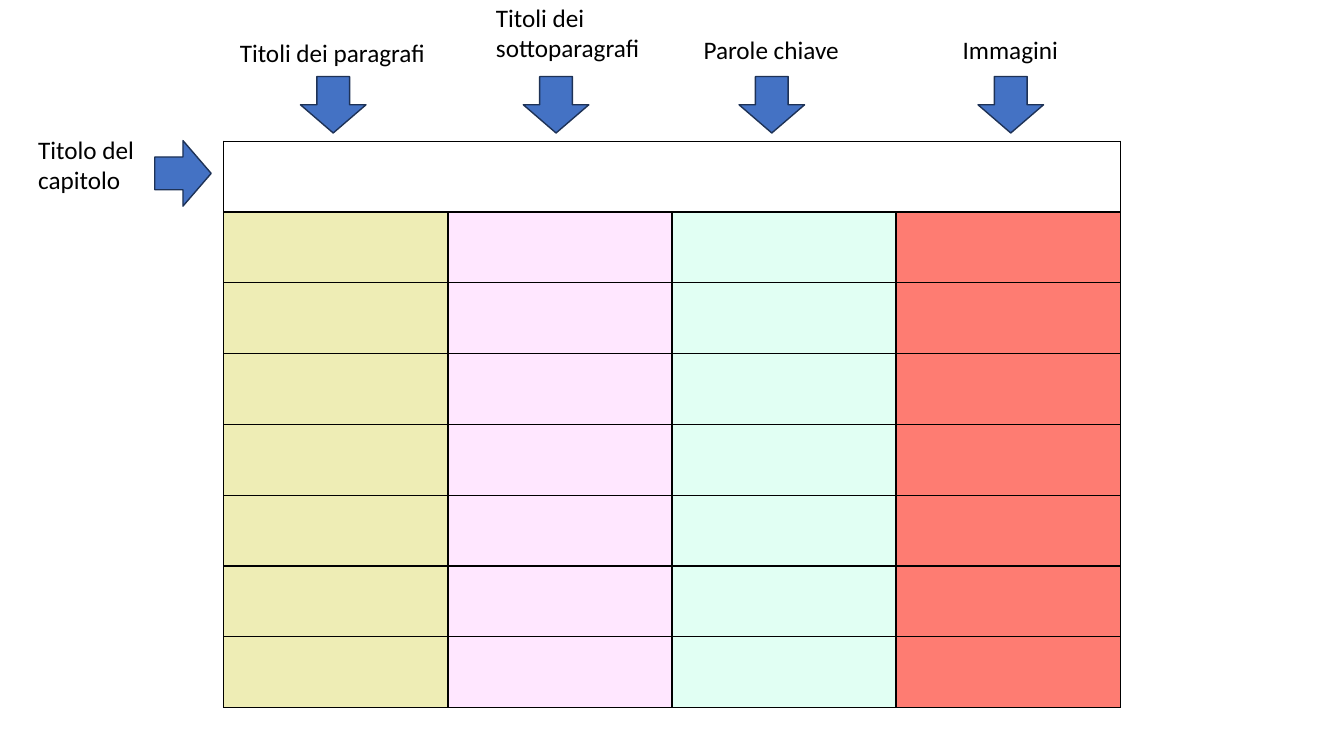
from dataclasses import dataclass

from lxml.etree import SubElement
from pptx import Presentation
from pptx.dml.color import RGBColor as Color
from pptx.enum.shapes import MSO_SHAPE as Preset
from pptx.enum.text import MSO_AUTO_SIZE as AutoSize
from pptx.oxml.ns import qn
from pptx.util import Pt

EMU_PER_PX = 9144


@dataclass(frozen=True)
class Theme:
    font: str = "Calibri"
    text_size: int = 18
    line_width: int = 1
    ink: str = "000000"
    header: str = "FFFFFF"
    columns: tuple = ("EEEDB5", "FFE7FF", "E1FFF3", "FE7C72")
    arrow: str = "4472C4"
    arrow_edge: str = "1E3256"


THEME = Theme()
TOPIC_ROWS = 7
COLUMN_ARROWS = (298, 519, 733, 970)
LABELS = (
    ("Titoli dei paragrafi", (228, 32, 206, 40), False),
    ("Titoli dei sottoparagrafi", (482, -3, 165, 71), True),
    ("Parole chiave", (688, 29, 156, 40), False),
    ("Immagini", (945, 29, 116, 40), False),
    ("Titolo del capitolo", (28, 128, 120, 71), True),
)


def px(*lengths):
    return [length * EMU_PER_PX for length in lengths]


def add_label(page, text, frame, wrap):
    box = page.shapes.add_textbox(*px(*frame))
    box.text_frame.word_wrap = wrap
    box.text_frame.auto_size = AutoSize.SHAPE_TO_FIT_TEXT
    span = box.text_frame.paragraphs[0].add_run()
    span.text = text
    span.font.name = THEME.font
    span.font.size = Pt(THEME.text_size)
    span.font.color.rgb = Color.from_string(THEME.ink)


def add_arrow(page, left, top, rotation=0):
    arrow = page.shapes.add_shape(Preset.DOWN_ARROW, *px(left, top, 65, 56))
    arrow.rotation = rotation
    arrow.shadow.inherit = False
    arrow.fill.solid()
    arrow.fill.fore_color.rgb = Color.from_string(THEME.arrow)
    arrow.line.color.rgb = Color.from_string(THEME.arrow_edge)
    arrow.line.width = Pt(THEME.line_width)


def format_cell(cell, fill, sides):
    properties = cell._tc.get_or_add_tcPr()
    for side in "LRTB":
        line = SubElement(properties, qn(f"a:ln{side}"), w=str(Pt(THEME.line_width)))
        if side in sides:
            paint = SubElement(line, qn("a:solidFill"))
            SubElement(paint, qn("a:srgbClr"), val=THEME.ink)
        else:
            SubElement(line, qn("a:noFill"))
    cell.fill.solid()
    cell.fill.fore_color.rgb = Color.from_string(fill)


def add_chapter_table(page):
    count = len(THEME.columns)
    frame = px(222, 140, 889, 562)
    table = page.shapes.add_table(TOPIC_ROWS + 1, count, *frame).table
    table.first_row = False
    table.horz_banding = False
    for column, fill in enumerate(THEME.columns):
        outer = {0: "L", count - 1: "R"}.get(column, "")
        format_cell(table.cell(0, column), THEME.header, "TB" + outer)
        for row in range(1, TOPIC_ROWS + 1):
            format_cell(table.cell(row, column), fill, "LRTB")


def main():
    deck = Presentation()
    deck.slide_width, deck.slide_height = px(1333, 750)
    page = deck.slides.add_slide(deck.slide_layouts[6])
    add_chapter_table(page)
    for left in COLUMN_ARROWS:
        add_arrow(page, left, 76)
    add_arrow(page, 149, 144, rotation=270)
    for text, frame, wrap in LABELS:
        add_label(page, text, frame, wrap)
    deck.save("out.pptx")


if __name__ == "__main__":
    main()
